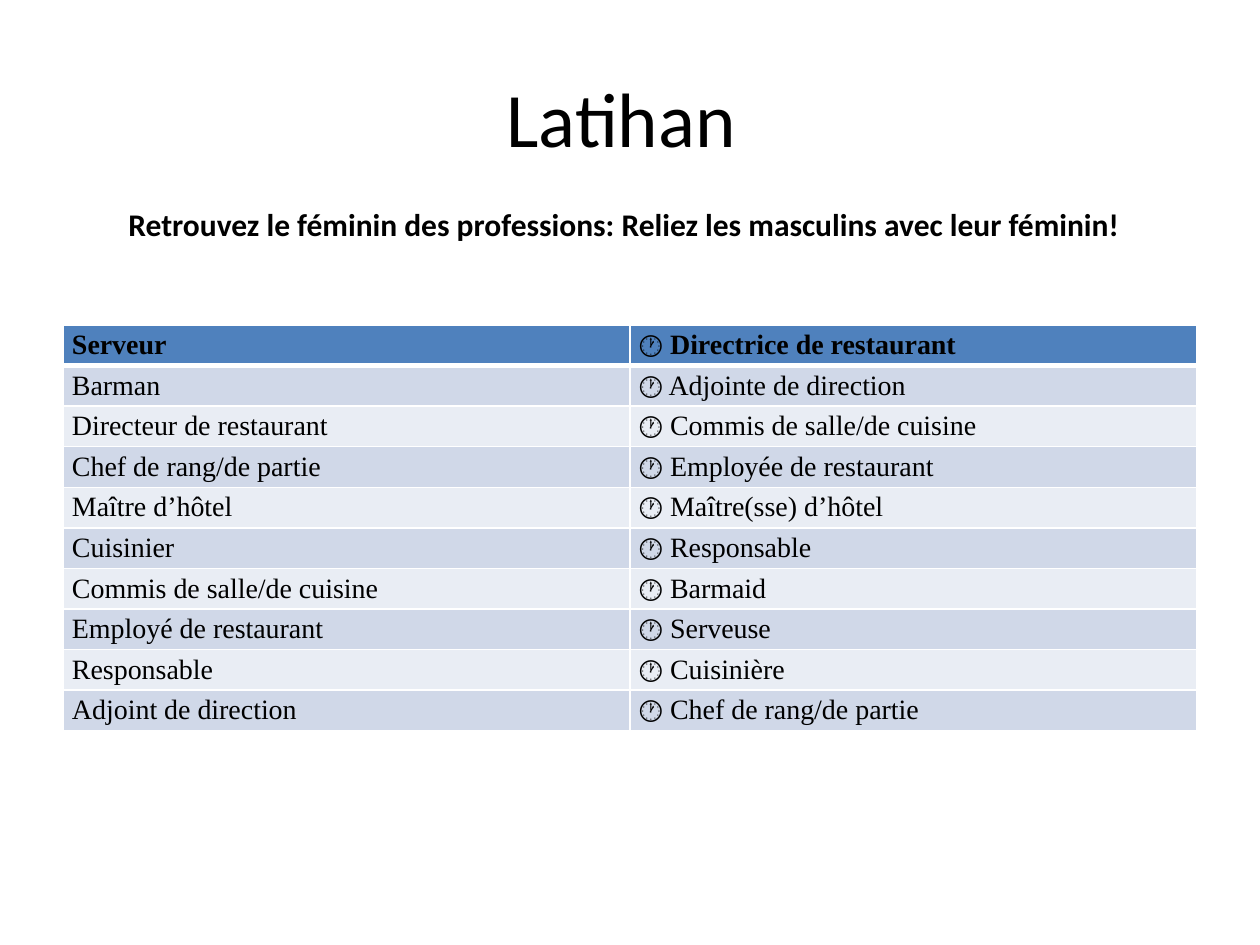
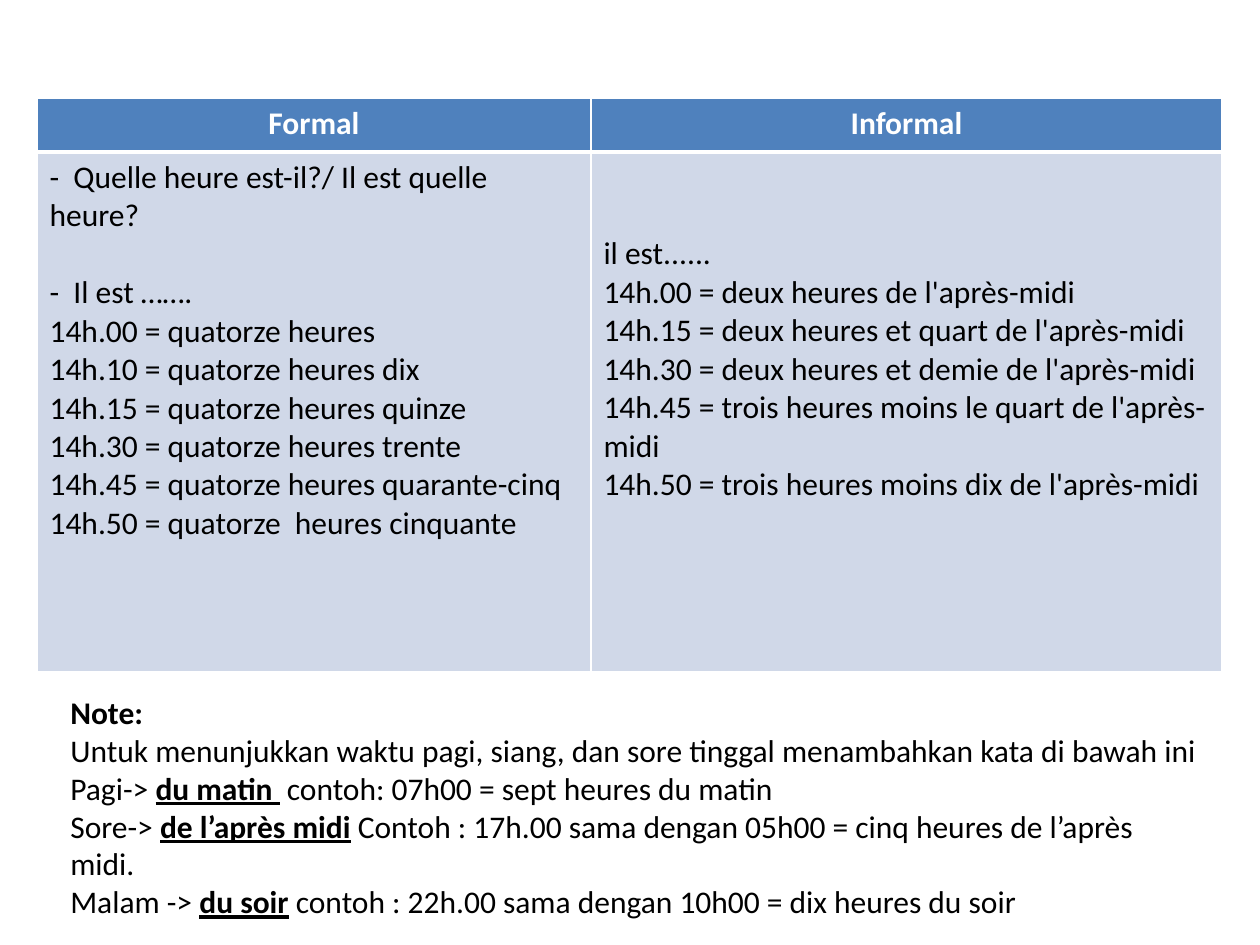
import pptx
import pptx.util
import pptx.dml.color
import pptx.enum.text
import pptx.oxml.ns
import lxml.etree

RGB = pptx.dml.color.RGBColor
BLACK = RGB(0x00, 0x00, 0x00)
WHITE = RGB(0xFF, 0xFF, 0xFF)
BLUE = RGB(0x4F, 0x81, 0xBD)
DARK = RGB(0xD0, 0xD8, 0xE8)
LIGHT = RGB(0xE9, 0xED, 0xF4)

SANS = "Calibri"
SERIF = "Times New Roman"
SCALE = 914400 / 126
LINE = 22  # points that one 18 pt line takes
CENTER = pptx.enum.text.PP_ALIGN.CENTER
MIDDLE = pptx.enum.text.MSO_ANCHOR.MIDDLE

JOBS = [
    ("Serveur", "Directrice de restaurant"),
    ("Barman", "Adjointe de direction"),
    ("Directeur de restaurant", "Commis de salle/de cuisine"),
    ("Chef de rang/de partie", "Employée de restaurant"),
    ("Maître d’hôtel", "Maître(sse) d’hôtel"),
    ("Cuisinier", "Responsable"),
    ("Commis de salle/de cuisine", "Barmaid"),
    ("Employé de restaurant", "Serveuse"),
    ("Responsable", "Cuisinière"),
    ("Adjoint de direction", "Chef de rang/de partie"),
]
FORMAL = [
    "-  Quelle heure est-il?/ Il est quelle heure?",
    "-  Il est …….",
    "14h.00 = quatorze heures",
    "14h.10 = quatorze heures dix",
    "14h.15 = quatorze heures quinze",
    "14h.30 = quatorze heures trente",
    "14h.45 = quatorze heures quarante-cinq",
    "14h.50 = quatorze  heures cinquante",
]
CASUAL = [
    "il est......",
    "14h.00 = deux heures de l'après-midi",
    "14h.15 = deux heures et quart de l'après-midi",
    "14h.30 = deux heures et demie de l'après-midi",
    "14h.45 = trois heures moins le quart de l'après-midi",
    "14h.50 = trois heures moins dix de l'après-midi",
]
# Day part, French key term, example
NOTES = [
    ("Pagi-> ", "du matin ", " contoh: 07h00 = sept heures du matin"),
    ("Sore-> ", "de l’après midi",
     " Contoh : 17h.00 sama dengan 05h00 = cinq heures de l’après midi."),
    ("Malam -> ", "du soir",
     " contoh : 22h.00 sama dengan 10h00 = dix heures du soir"),
]


def px(size):
    return round(size * SCALE)


def add_run(para, text, size=18, font=SANS, color=BLACK, bold=False, under=False):
    run = para.add_run()
    run.text = text
    run.font.size = pptx.util.Pt(size)
    run.font.name = font
    run.font.color.rgb = color
    run.font.bold = bold
    run.font.underline = under


def next_para(frame, first):
    return frame.paragraphs[0] if first else frame.add_paragraph()


def add_box(slide, left, top, width, height):
    box = slide.shapes.add_textbox(px(left), px(top), px(width), px(height))
    box.text_frame.word_wrap = True
    return box.text_frame


def add_grid(slide, left, top, cols, rows):
    """Add an empty table with a blue head row and banded rows below."""
    frame = slide.shapes.add_table(
        len(rows), len(cols), px(left), px(top), px(sum(cols)), px(sum(rows)))
    table = frame.table
    for col, width in zip(table.columns, cols):
        col.width = px(width)
    for num, (row, height) in enumerate(zip(table.rows, rows)):
        row.height = px(height)
        fill = BLUE if num == 0 else (LIGHT, DARK)[num % 2]
        for cell in row.cells:
            add_edges(cell, 3 if num == 1 else 1, 3 if num == 0 else 1)
            cell.fill.solid()
            cell.fill.fore_color.rgb = fill
    return table


def add_edges(cell, above, below):
    """Draw white cell borders, widths above and below in points."""
    name = pptx.oxml.ns.qn
    props = cell._tc.get_or_add_tcPr()
    for side, width in (("L", 1), ("R", 1), ("T", above), ("B", below)):
        line = lxml.etree.SubElement(
            props, name("a:ln" + side), w=str(pptx.util.Pt(width)))
        fill = lxml.etree.SubElement(line, name("a:solidFill"))
        lxml.etree.SubElement(fill, name("a:srgbClr"), val=str(WHITE))


def fill_jobs(table):
    for num, pair in enumerate(JOBS):
        for col, text in enumerate(pair):
            cell = table.cell(num, col)
            cell.margin_left = cell.margin_right = px(9)
            cell.margin_top = cell.margin_bottom = 0
            para = cell.text_frame.paragraphs[0]
            para.line_spacing = 1.15
            mark = "🕐 " if col else ""
            add_run(para, mark + text, 16, SERIF, bold=num == 0)


def fill_hours(table):
    for col, head in enumerate(("Formal", "Informal")):
        para = table.cell(0, col).text_frame.paragraphs[0]
        para.alignment = CENTER
        add_run(para, head, color=WHITE, bold=True)
    for col, lines in enumerate((FORMAL, CASUAL)):
        frame = table.cell(1, col).text_frame
        for num, text in enumerate(lines):
            add_run(next_para(frame, num == 0), text)
    reply = table.cell(1, 0).text_frame.paragraphs[1]
    reply.space_before = pptx.util.Pt(LINE)
    table.cell(1, 1).margin_top = px(6) + pptx.util.Pt(2 * LINE)


def add_notes(slide):
    frame = add_box(slide, 58, 687, 1158, 242)
    add_run(frame.paragraphs[0], "Note:", bold=True)
    add_run(frame.add_paragraph(), "Untuk menunjukkan waktu pagi, siang, dan sore "
            "tinggal menambahkan kata di bawah ini")
    for part, term, sample in NOTES:
        para = frame.add_paragraph()
        add_run(para, part)
        add_run(para, term, bold=True, under=True)
        add_run(para, sample)


def make_jobs(slide):
    title = add_box(slide, 63, 38, 1134, 157)
    title.vertical_anchor = MIDDLE
    title.paragraphs[0].alignment = CENTER
    add_run(title.paragraphs[0], "Latihan ", 44)
    fill_jobs(add_grid(slide, 63, 325, [567] * 2, [40.6] * len(JOBS)))
    task = add_box(slide, 116, 199, 1029, 89)
    add_run(task.paragraphs[0], "Retrouvez le féminin des professions: "
            "Reliez les masculins avec leur féminin!", bold=True)


def make_hours(slide):
    fill_hours(add_grid(slide, 37, 98, [554, 631], [54, 520]))
    add_notes(slide)


def main():
    deck = pptx.Presentation()
    deck.slide_width, deck.slide_height = px(1260), px(945)
    for make in (make_jobs, make_hours):
        make(deck.slides.add_slide(deck.slide_layouts[6]))
    deck.save("out.pptx")


if __name__ == "__main__":
    main()
